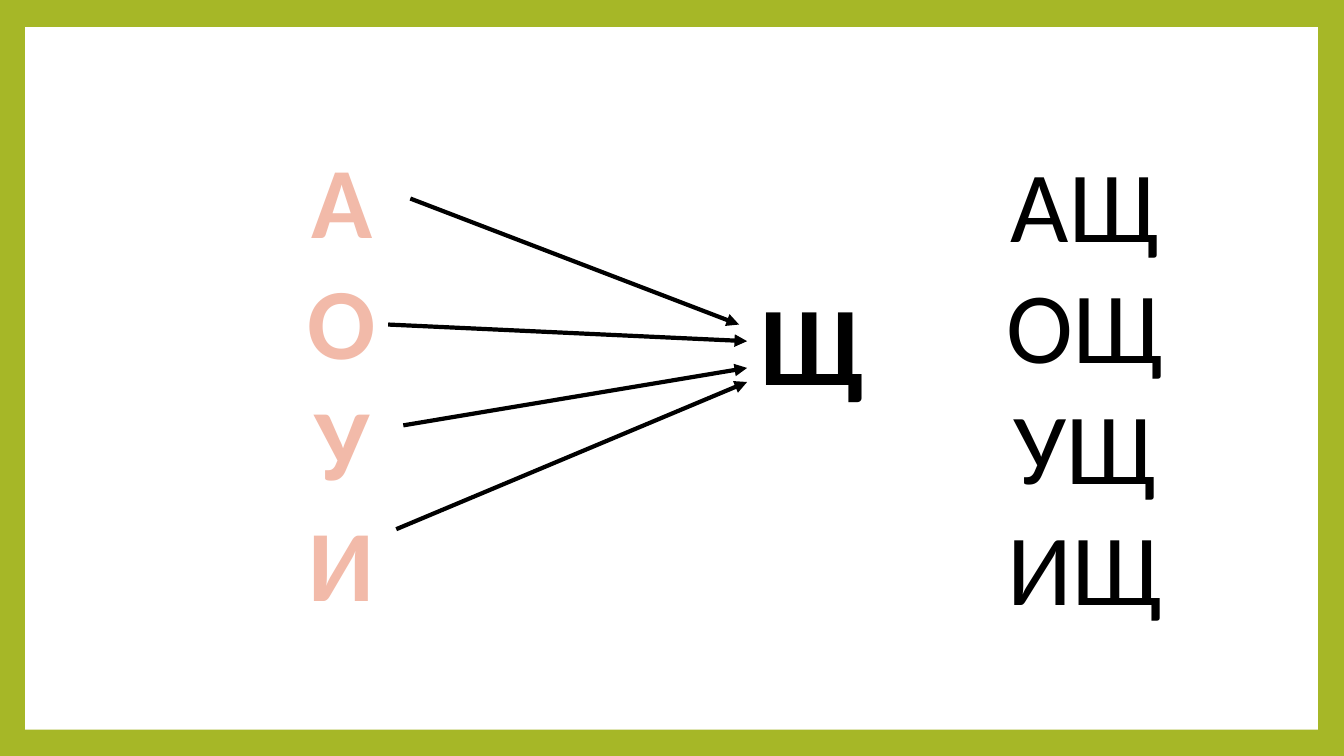
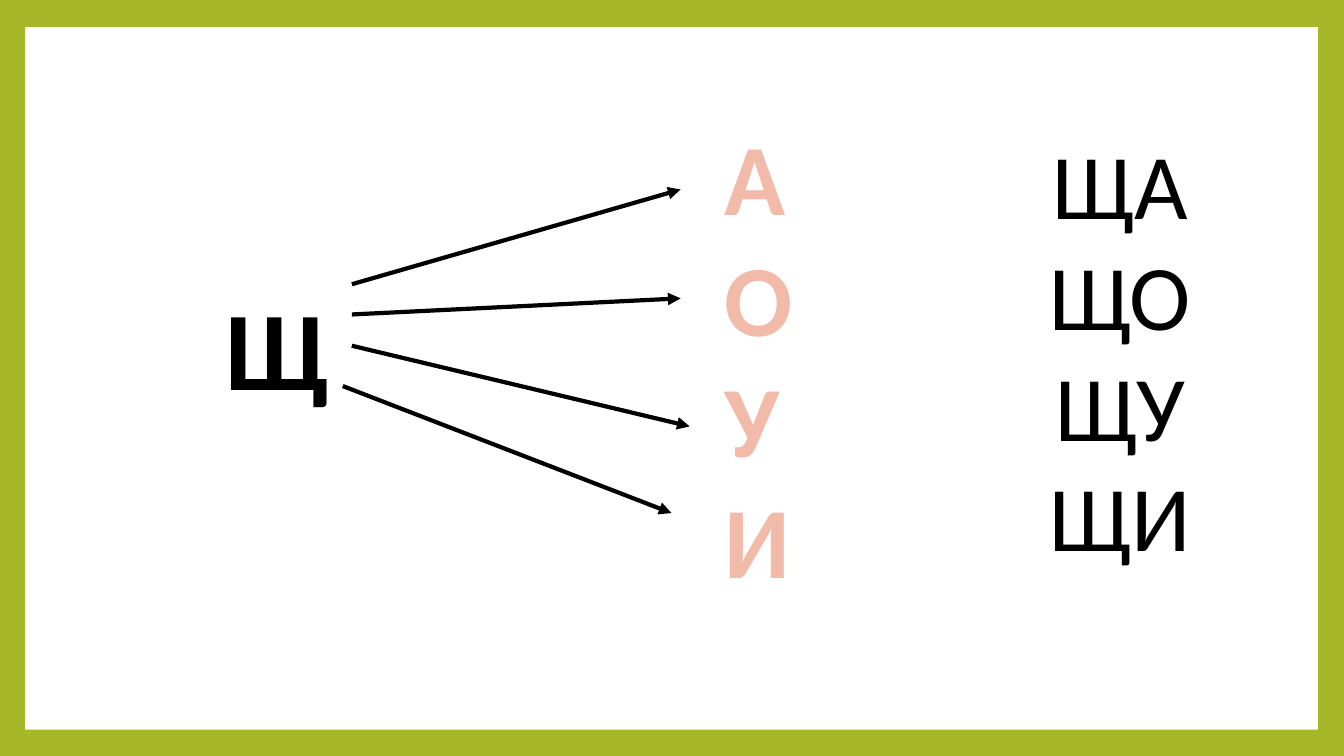
from dataclasses import dataclass

from lxml import etree
from pptx import Presentation
from pptx.dml.color import RGBColor
from pptx.enum.shapes import MSO_CONNECTOR, MSO_SHAPE
from pptx.enum.text import MSO_AUTO_SIZE, PP_ALIGN
from pptx.oxml.ns import qn
from pptx.util import Emu, Pt

STRAIGHT = MSO_CONNECTOR.STRAIGHT
RECTANGLE = MSO_SHAPE.RECTANGLE
CENTER = PP_ALIGN.CENTER
GROW = MSO_AUTO_SIZE.SHAPE_TO_FIT_TEXT
LEFT_SIDE = 1

EMU_PER_PX = 9144
SLIDE_SIZE = (1333, 750)
FRAME_GREEN = "A6B727"
PANEL_WHITE = "FFFFFF"
VOWEL_PINK = "F2BAA9"
VOWEL_OUTLINE = "DF5327"
BLACK = "000000"
FONT = "Calibri"

CONSONANT = "Щ"
VOWELS = ["А", "О", "У", "И"]


@dataclass(frozen=True)
class Box:
    left: int
    top: int
    width: int
    height: int


@dataclass(frozen=True)
class Arrow:
    start: tuple[int, int]
    end: tuple[int, int]
    meets_consonant: bool = False


@dataclass(frozen=True)
class SyllableSlide:
    vowels: Box
    consonant: Box
    arrows: list[Arrow]
    syllables: Box
    syllable_size: int
    vowel_first: bool


LESSON = [
    SyllableSlide(
        vowels=Box(263, 132, 152, 495),
        consonant=Box(741, 266, 129, 145),
        arrows=[
            Arrow((407, 197), (733, 322)),
            Arrow((385, 322), (741, 339), meets_consonant=True),
            Arrow((400, 422), (741, 365)),
            Arrow((393, 525), (741, 379)),
        ],
        syllables=Box(929, 136, 294, 495),
        syllable_size=72,
        vowel_first=True,
    ),
    SyllableSlide(
        vowels=Box(709, 109, 71, 493),
        consonant=Box(211, 271, 129, 145),
        arrows=[
            Arrow((340, 383), (666, 509)),
            Arrow((349, 343), (684, 423)),
            Arrow((349, 312), (675, 296)),
            Arrow((349, 282), (675, 188)),
        ],
        syllables=Box(931, 121, 360, 454),
        syllable_size=66,
        vowel_first=False,
    ),
]


def px(length: int) -> Emu:
    return Emu(length * EMU_PER_PX)


def place(box: Box) -> tuple[Emu, Emu, Emu, Emu]:
    return px(box.left), px(box.top), px(box.width), px(box.height)


def paint(fill, color: str) -> None:
    fill.solid()
    fill.fore_color.rgb = RGBColor.from_string(color)


def outline_letters(run, color: str, width: float) -> None:
    line = etree.Element(qn("a:ln"), w=str(Pt(width)))
    fill = etree.SubElement(line, qn("a:solidFill"))
    etree.SubElement(fill, qn("a:srgbClr"), val=color)
    run._r.get_or_add_rPr().insert(0, line)


def add_text(slide, box: Box, lines: list[str], *, size: int,
             color: str = BLACK, bold: bool = False, wrap: bool = True,
             outline: str | None = None):
    text_box = slide.shapes.add_textbox(*place(box))
    frame = text_box.text_frame
    frame.word_wrap = wrap
    frame.auto_size = GROW
    frame.text = "\n".join(lines)
    for paragraph in frame.paragraphs:
        paragraph.alignment = CENTER
        for run in paragraph.runs:
            run.font.name = FONT
            run.font.size = Pt(size)
            run.font.bold = bold
            paint(run.font.fill, color)
            if outline:
                outline_letters(run, outline, 1.75)
    return text_box


def add_arrow(slide, arrow: Arrow, consonant) -> None:
    connector = slide.shapes.add_connector(
        STRAIGHT, *map(px, arrow.start + arrow.end))
    if arrow.meets_consonant:
        connector.end_connect(consonant, LEFT_SIDE)
    connector.line.width = Pt(3)
    paint(connector.line.fill, BLACK)
    line = connector.line._get_or_add_ln()
    etree.SubElement(line, qn("a:tailEnd"), type="triangle")
    etree.SubElement(connector.element.spPr, qn("a:effectLst"))


def add_panel_to_layout(layout, slide) -> None:
    """Draw the white panel on a slide, then move it to the shared layout."""
    panel = slide.shapes.add_shape(RECTANGLE, *place(Box(25, 27, 1282, 697)))
    panel.shadow.inherit = False
    paint(panel.fill, PANEL_WHITE)
    panel.line.fill.background()
    layout.shapes.element.append(panel.element)


def fill_slide(slide, content: SyllableSlide) -> None:
    add_text(slide, content.vowels, VOWELS, size=72, color=VOWEL_PINK,
             bold=True, outline=VOWEL_OUTLINE)
    consonant = add_text(slide, content.consonant, [CONSONANT], size=80,
                         bold=True, wrap=False)
    for arrow in content.arrows:
        add_arrow(slide, arrow, consonant)
    syllables = [vowel + CONSONANT if content.vowel_first
                 else CONSONANT + vowel for vowel in VOWELS]
    add_text(slide, content.syllables, syllables, size=content.syllable_size)


def main() -> None:
    presentation = Presentation()
    presentation.slide_width, presentation.slide_height = map(px, SLIDE_SIZE)
    paint(presentation.slide_master.background.fill, FRAME_GREEN)
    blank = presentation.slide_layouts[6]
    slides = [presentation.slides.add_slide(blank) for _ in LESSON]
    add_panel_to_layout(blank, slides[0])
    for slide, content in zip(slides, LESSON):
        fill_slide(slide, content)
    presentation.save("out.pptx")


if __name__ == "__main__":
    main()
